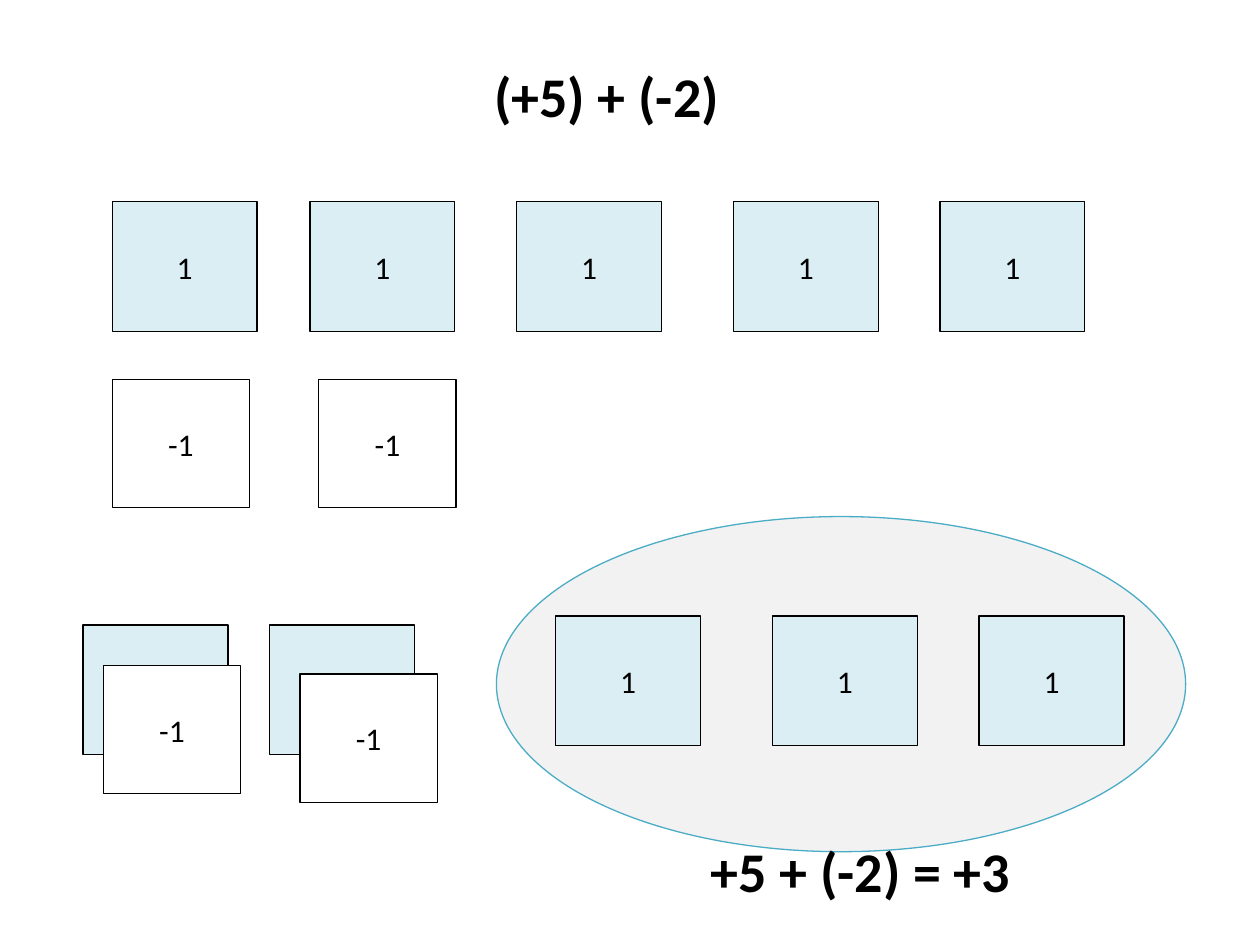
from pptx import Presentation
from pptx.dml.color import RGBColor
from pptx.enum.shapes import MSO_SHAPE
from pptx.enum.text import MSO_ANCHOR, MSO_AUTO_SIZE, PP_ALIGN
from pptx.util import Inches, Pt

FONT = "Calibri"
BLACK = "000000"
POSITIVE = {"text": "1", "width": 1.15, "height": 1.03, "fill": "DBEEF4"}
NEGATIVE = {"text": "-1", "width": 1.09, "height": 1.02, "fill": "FFFFFF"}


def color(value):
    """Return the colour for a hex string."""
    return RGBColor.from_string(value)


def write(text_frame, text, size, bold=False):
    """Write one centred line in a text frame."""
    paragraph = text_frame.paragraphs[0]
    paragraph.text = text
    paragraph.alignment = PP_ALIGN.CENTER
    paragraph.font.name = FONT
    paragraph.font.size = Pt(size)
    paragraph.font.bold = bold
    paragraph.font.color.rgb = color(BLACK)


def add_outlined(slide, kind, left, top, width, height, fill, line):
    """Add a filled shape with a thin outline."""
    shape = slide.shapes.add_shape(
        kind, Inches(left), Inches(top), Inches(width), Inches(height))
    shape.shadow.inherit = False
    shape.fill.solid()
    shape.fill.fore_color.rgb = color(fill)
    shape.line.color.rgb = color(line)
    shape.line.width = Pt(0.75)
    return shape


def add_tile(slide, left, top, tile, labelled=True):
    """Add one algebra tile, with its value if labelled."""
    shape = add_outlined(slide, MSO_SHAPE.RECTANGLE, left, top, tile["width"],
                         tile["height"], tile["fill"], BLACK)
    if labelled:
        text_frame = shape.text_frame
        text_frame.word_wrap = False
        text_frame.vertical_anchor = MSO_ANCHOR.MIDDLE
        write(text_frame, tile["text"], 18)


def add_tile_row(slide, left, top, offsets, tile):
    """Add a row of equal tiles at offsets from its left edge."""
    for offset in offsets:
        add_tile(slide, left + offset, top, tile)


def add_zero_pair(slide, left, top, shift_x, shift_y):
    """Add a positive tile cancelled by a negative tile laid over it."""
    add_tile(slide, left, top, POSITIVE, labelled=False)
    add_tile(slide, left + shift_x, top + shift_y, NEGATIVE)


def add_result(slide, left, top, width, height):
    """Add the ellipse that holds the remaining positive tiles."""
    add_outlined(slide, MSO_SHAPE.OVAL, left, top, width, height,
                 "F2F2F2", "4BACC6")
    add_tile_row(slide, left + 0.47, top + 0.79, (0, 1.72, 3.36), POSITIVE)


def add_expression(slide, left, top, width, height, text):
    """Add a large bold expression."""
    box = slide.shapes.add_textbox(
        Inches(left), Inches(top), Inches(width), Inches(height))
    box.text_frame.word_wrap = True
    box.text_frame.auto_size = MSO_AUTO_SIZE.SHAPE_TO_FIT_TEXT
    write(box.text_frame, text, 32, bold=True)


def main():
    """Build the integer addition slide."""
    presentation = Presentation()
    presentation.slide_width = Inches(10)
    presentation.slide_height = Inches(7.5)
    slide = presentation.slides.add_slide(presentation.slide_layouts[6])
    add_expression(slide, 3.72, 0.44, 2.19, 0.64, "(+5) + (-2)")
    add_tile_row(slide, 0.89, 1.6, (0, 1.57, 3.21, 4.93, 6.57), POSITIVE)
    add_tile_row(slide, 0.89, 3.01, (0, 1.64), NEGATIVE)
    add_zero_pair(slide, 0.66, 4.96, 0.16, 0.32)
    add_zero_pair(slide, 2.14, 4.96, 0.24, 0.39)
    add_result(slide, 3.94, 4.1, 5.47, 2.66)
    add_expression(slide, 5.11, 6.59, 3.44, 0.64, "+5 + (-2) = +3")
    presentation.save("out.pptx")


if __name__ == "__main__":
    main()
